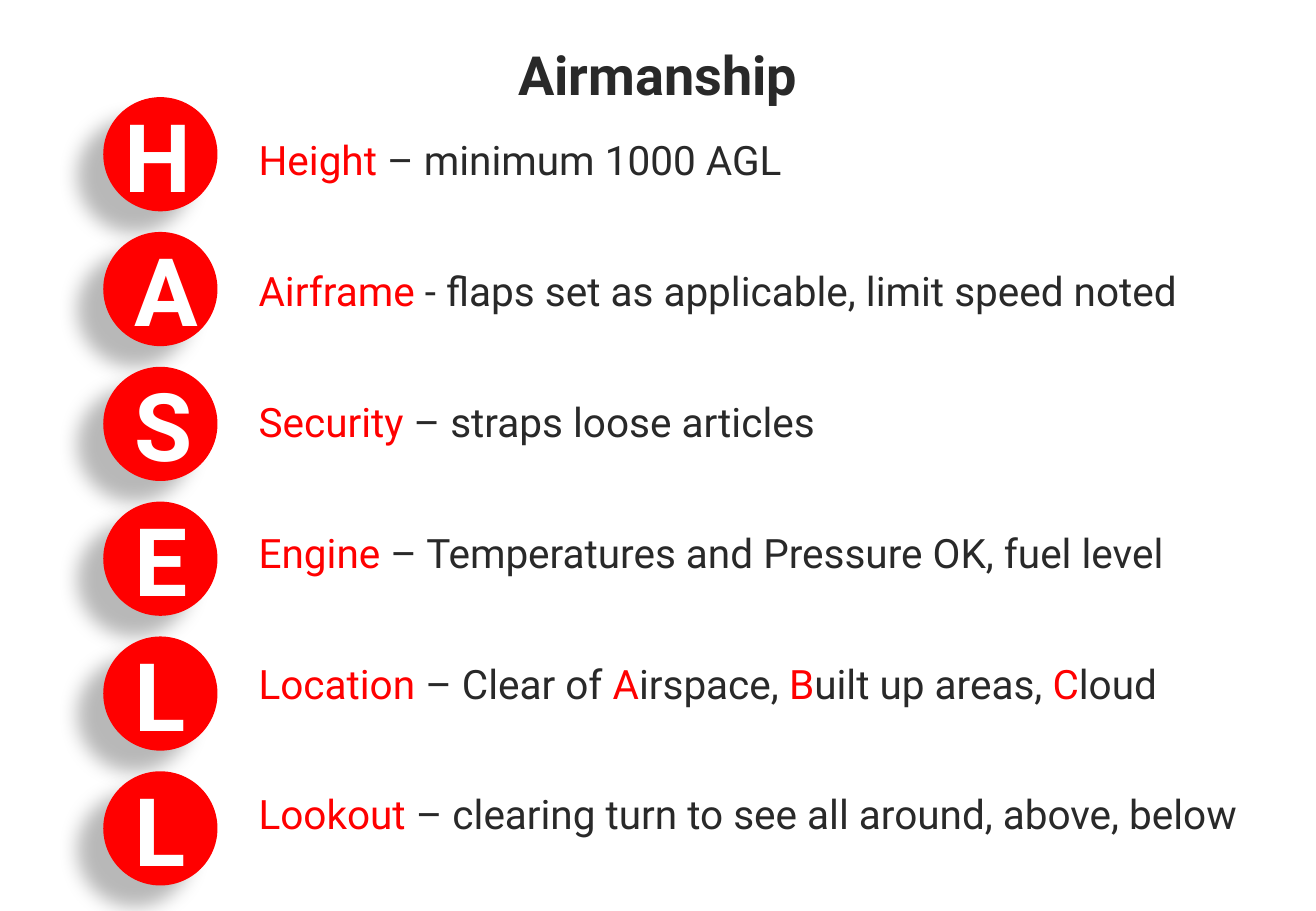
"""Build the HASELL airmanship checklist slide."""
from dataclasses import dataclass

from lxml import etree
from pptx import Presentation
from pptx import util as u
from pptx.dml.color import RGBColor
from pptx.enum import shapes, text
from pptx.oxml.ns import qn

PX = 9144
ROWS = [
    "Height| – minimum 1000 AGL",
    "Airframe| - flaps set as applicable, limit speed noted",
    "Security| – straps loose articles",
    "Engine| – Temperatures and Pressure OK, fuel level",
    "Location| – Clear of |A|irspace, |B|uilt up areas, |C|loud",
    "Lookout| – clearing turn to see all around, above, below",
]


@dataclass(frozen=True)
class Theme:
    font: str = "Roboto"
    red: str = "FF0000"
    dark: str = "292929"
    white: str = "FFFFFF"
    shade: str = "000000"
    title: int = 32
    badge: int = 56
    body: int = 24


THEME = Theme()


def px(*vals):
    return [u.Emu(v * PX) for v in vals]


def put(obj, **vals):
    for key, val in vals.items():
        setattr(obj, key, val)


def add_run(para, words, size, color, bold=False):
    run = para.add_run()
    run.text = words
    put(run.font, name=THEME.font, size=u.Pt(size), bold=bold)
    run.font.color.rgb = RGBColor.from_string(color)


def add_box(slide, *area):
    frame = slide.shapes.add_textbox(*px(*area)).text_frame
    frame.word_wrap = True
    return frame


def add_shade(shape):
    shape.shadow.inherit = False
    effects = shape._element.spPr.find(qn("a:effectLst"))
    shade = etree.SubElement(
        effects, qn("a:outerShdw"), blurRad=str(u.Pt(11.8)),
        dist=str(u.Pt(19.7)), dir=str(141 * 60000),
        algn="ctr", rotWithShape="0")
    color = etree.SubElement(shade, qn("a:srgbClr"), val=THEME.shade)
    etree.SubElement(color, qn("a:alpha"), val="28000")


def add_badge(slide, letter, top, inset):
    disc = slide.shapes.add_shape(
        shapes.MSO_SHAPE.OVAL, *px(85, top, 94, 94))
    disc.fill.solid()
    disc.fill.fore_color.rgb = RGBColor.from_string(THEME.red)
    disc.line.fill.background()
    add_shade(disc)
    frame = disc.text_frame
    put(frame, word_wrap=True, margin_left=u.Emu(inset * PX), margin_right=0,
        margin_top=0, margin_bottom=0,
        vertical_anchor=text.MSO_ANCHOR.MIDDLE)
    para = frame.paragraphs[0]
    para.alignment = text.PP_ALIGN.LEFT
    add_run(para, letter, THEME.badge, THEME.white, True)


def add_title(slide, words):
    frame = add_box(slide, 54, 29, 975, 63)
    frame.vertical_anchor = text.MSO_ANCHOR.MIDDLE
    para = frame.paragraphs[0]
    para.alignment = text.PP_ALIGN.CENTER
    add_run(para, words, THEME.title, THEME.dark, True)


def add_list(slide, rows):
    frame = add_box(slide, 203, 99, 860, 640)
    for i, row in enumerate(rows):
        para = frame.add_paragraph() if i else frame.paragraphs[0]
        put(para, line_spacing=u.Pt(34), space_before=u.Pt(43.6 if i else 0))
        for j, part in enumerate(row.split("|")):
            color = THEME.dark if j % 2 else THEME.red
            add_run(para, part, THEME.body, color)


def main():
    deck = Presentation()
    put(deck, slide_width=u.Inches(10.83), slide_height=u.Inches(7.5))
    slide = deck.slides.add_slide(deck.slide_layouts[6])
    for i, row in enumerate(ROWS):
        add_badge(slide, row[0], 80 + 111 * i, 12 if i else 4)
    add_list(slide, ROWS)
    add_title(slide, "Airmanship")
    deck.save("out.pptx")


if __name__ == "__main__":
    main()
